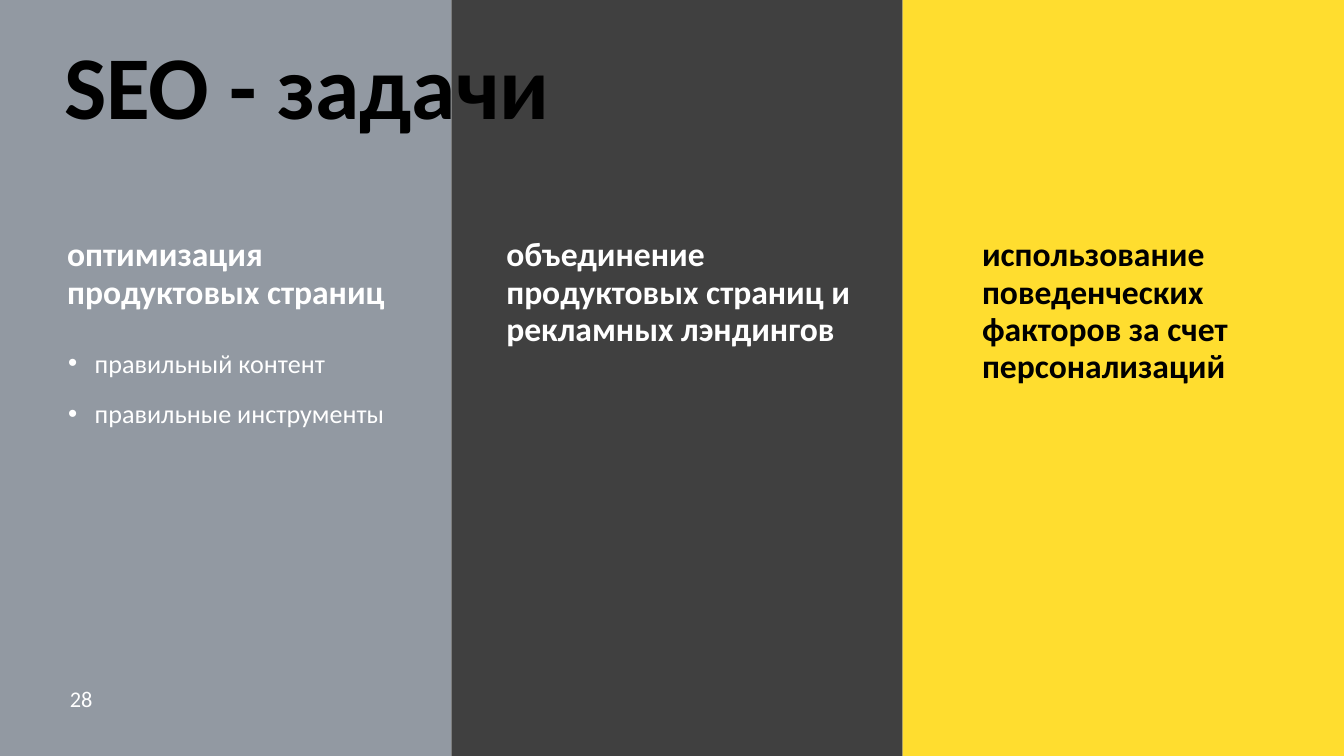
from dataclasses import dataclass

from lxml.etree import SubElement
from pptx import Presentation
from pptx.dml.color import RGBColor
from pptx.enum.shapes import MSO_SHAPE
from pptx.enum.text import MSO_ANCHOR
from pptx.oxml.ns import qn
from pptx.slide import Slide
from pptx.util import Cm, Pt

BLACK = RGBColor(0x00, 0x00, 0x00)
WHITE = RGBColor(0xFF, 0xFF, 0xFF)
GREY = RGBColor(0x92, 0x99, 0xA2)
CHARCOAL = RGBColor(0x40, 0x40, 0x40)
YELLOW = RGBColor(0xFF, 0xDD, 0x2F)

FONT = "Calibri"
SLIDE_WIDTH, SLIDE_HEIGHT = Cm(25.4), Cm(14.29)
COLUMN_WIDTH = Cm(8.53)
HEADING_TOP = Cm(4.34)
BULLET_INDENT = Cm(0.5)


@dataclass
class Column:
    fill: RGBColor
    text_color: RGBColor
    text_left: Cm
    text_width: Cm
    text_height: Cm
    heading: list[str]


# A line feed inside a paragraph becomes a line break
COLUMNS = [
    Column(GREY, WHITE, Cm(1.02), Cm(8.08), Cm(1.68),
           ["оптимизация \nпродуктовых страниц"]),
    Column(CHARCOAL, WHITE, Cm(9.32), Cm(8.99), Cm(2.39),
           ["объединение", "продуктовых страниц и", "рекламных лэндингов"]),
    Column(YELLOW, BLACK, Cm(18.31), Cm(5.61), Cm(3.1),
           ["использование поведенческих факторов за счет персонализаций"]),
]
TASKS = ["правильный контент", "правильные инструменты"]


def add_panel(slide: Slide, left: int, width: int, fill: RGBColor) -> None:
    panel = slide.shapes.add_shape(MSO_SHAPE.RECTANGLE, left, 0, width, SLIDE_HEIGHT)
    panel.shadow.inherit = False
    panel.fill.solid()
    panel.fill.fore_color.rgb = fill
    panel.line.fill.background()


def add_bullet(paragraph) -> None:
    properties = paragraph._p.get_or_add_pPr()
    properties.set("marL", str(BULLET_INDENT))
    properties.set("indent", str(-BULLET_INDENT))
    SubElement(properties, qn("a:buFont")).set("typeface", "Arial")
    SubElement(properties, qn("a:buChar")).set("char", "•")


def add_text(slide: Slide, left: int, top: int, width: int, height: int,
             lines: list[str], *, size: int, color: RGBColor, bold: bool = False,
             line_spacing: int | None = None, space_after: int = 0,
             bulleted: bool = False, anchor: MSO_ANCHOR = MSO_ANCHOR.TOP) -> None:
    frame = slide.shapes.add_textbox(left, top, width, height).text_frame
    frame.word_wrap = True
    frame.vertical_anchor = anchor
    for index, line in enumerate(lines):
        paragraph = frame.add_paragraph() if index else frame.paragraphs[0]
        paragraph.text = line
        paragraph.space_after = Pt(space_after)
        if line_spacing:
            paragraph.line_spacing = Pt(line_spacing)
        if bulleted:
            add_bullet(paragraph)
        for run in paragraph.runs:
            run.font.name = FONT
            run.font.size = Pt(size)
            run.font.bold = bold
            run.font.color.rgb = color


def main() -> None:
    presentation = Presentation()
    presentation.slide_width = SLIDE_WIDTH
    presentation.slide_height = SLIDE_HEIGHT
    slide = presentation.slides.add_slide(presentation.slide_layouts[6])

    # Background columns; the last one takes the remaining width
    for index, column in enumerate(COLUMNS):
        left = index * COLUMN_WIDTH
        add_panel(slide, left, min(COLUMN_WIDTH, SLIDE_WIDTH - left), column.fill)

    # Title
    add_text(slide, Cm(0.97), Cm(0.38), Cm(22.86), Cm(2.39), ["SEO - задачи"],
             size=48, color=BLACK, bold=True, anchor=MSO_ANCHOR.MIDDLE)

    # Column headings
    for column in COLUMNS:
        add_text(slide, column.text_left, HEADING_TOP, column.text_width,
                 column.text_height, column.heading, size=18,
                 color=column.text_color, bold=True, line_spacing=20)

    # Tasks of the first column
    add_text(slide, Cm(1.04), Cm(6.5), Cm(6.93), Cm(1.75), TASKS, size=14,
             color=WHITE, line_spacing=15, space_after=12, bulleted=True)

    # Page number
    add_text(slide, Cm(1.07), Cm(12.83), Cm(5.92), Cm(0.76), ["28"],
             size=12, color=WHITE, anchor=MSO_ANCHOR.MIDDLE)

    presentation.save("out.pptx")


if __name__ == "__main__":
    main()
